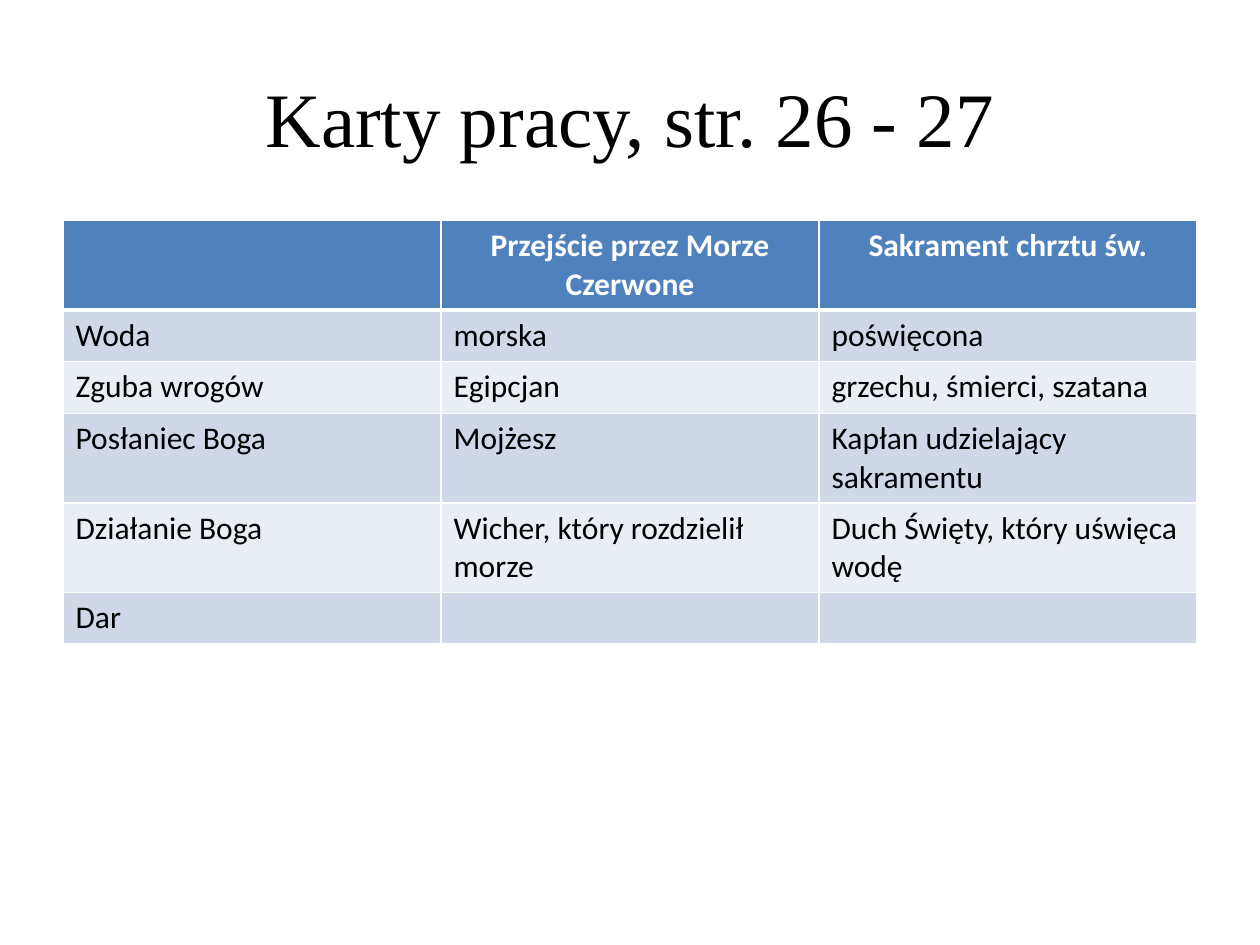
from dataclasses import dataclass

from lxml import etree
from pptx import Presentation
from pptx import util as u
from pptx.dml.color import RGBColor
from pptx.enum import text
from pptx.oxml import ns


@dataclass(frozen=True)
class RowStyle:
    fill: str
    color: str
    bold: bool
    align: text.PP_ALIGN
    bottom: float


HEADER = RowStyle("4F81BD", "FFFFFF", True, text.PP_ALIGN.CENTER, 3)
BANDS = (
    RowStyle("E9EDF4", "000000", False, text.PP_ALIGN.LEFT, 1),
    RowStyle("D0D8E8", "000000", False, text.PP_ALIGN.LEFT, 1),
)
ROWS = (
    ("", "Przejście przez Morze Czerwone", "Sakrament chrztu św."),
    ("Woda", "morska", "poświęcona"),
    ("Zguba wrogów", "Egipcjan", "grzechu, śmierci, szatana"),
    ("Posłaniec Boga", "Mojżesz", "Kapłan udzielający sakramentu"),
    ("Działanie Boga", "Wicher, który rozdzielił morze", "Duch Święty, który uświęca wodę"),
    ("Dar", "", ""),
)
ROW_HEIGHT = 0.41


def rgb(value: str) -> RGBColor:
    return RGBColor.from_string(value)


def format_para(para, align: text.PP_ALIGN, color: str, **values) -> None:
    para.alignment = align
    for name, value in values.items():
        setattr(para.font, name, value)
    para.font.color.rgb = rgb(color)


def add_borders(cell, widths: dict[str, float], color: str = "FFFFFF") -> None:
    properties = cell._tc.get_or_add_tcPr()
    for index, (side, width) in enumerate(widths.items()):
        line = etree.Element(ns.qn(f"a:{side}"), w=str(u.Pt(width)))
        fill = etree.SubElement(line, ns.qn("a:solidFill"))
        etree.SubElement(fill, ns.qn("a:srgbClr"), val=color)
        properties.insert(index, line)


def draw_cell(cell, words: str, style: RowStyle, top: float) -> None:
    cell.text = words
    cell.fill.solid()
    cell.fill.fore_color.rgb = rgb(style.fill)
    format_para(cell.text_frame.paragraphs[0], style.align, style.color,
                name="Calibri", size=u.Pt(18), bold=style.bold)
    add_borders(cell, {"lnL": 1, "lnR": 1, "lnT": top, "lnB": style.bottom})


def draw_title(page, words: str) -> None:
    title = page.shapes.title
    box = {"left": 0.5, "top": 0.3, "width": 9, "height": 1.25}
    for name, value in box.items():
        setattr(title, name, u.Inches(value))
    title.text_frame.text = words
    title.text_frame.vertical_anchor = text.MSO_ANCHOR.MIDDLE
    format_para(title.text_frame.paragraphs[0], text.PP_ALIGN.CENTER, "000000",
                name="Times New Roman", size=u.Pt(44))


def draw_table(page) -> None:
    table = page.shapes.add_table(
        len(ROWS), len(ROWS[0]), u.Inches(0.5), u.Inches(1.75),
        u.Inches(9), u.Inches(ROW_HEIGHT * len(ROWS))).table
    top = 1
    for index, (row, words) in enumerate(zip(table.rows, ROWS)):
        row.height = u.Inches(ROW_HEIGHT)
        style = BANDS[index % 2] if index else HEADER
        for cell, label in zip(row.cells, words):
            draw_cell(cell, label, style, top)
        top = style.bottom


def main() -> None:
    deck = Presentation()
    deck.slide_width, deck.slide_height = u.Inches(10), u.Inches(7.5)
    page = deck.slides.add_slide(deck.slide_layouts[5])
    draw_title(page, "Karty pracy, str. 26 - 27")
    draw_table(page)
    deck.save("out.pptx")


if __name__ == "__main__":
    main()
